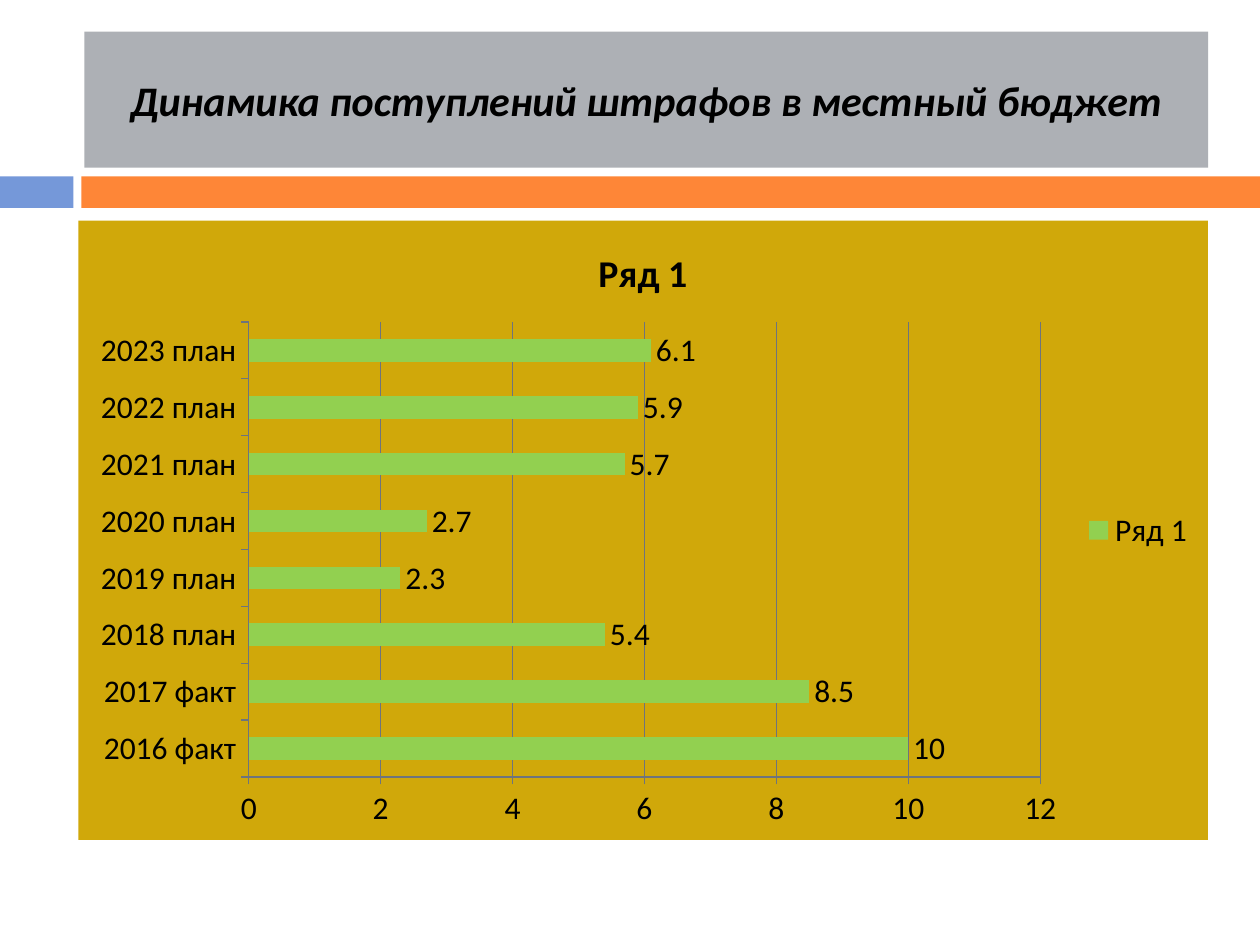
from lxml.etree import fromstring
from pptx import Presentation
from pptx.chart.data import CategoryChartData
from pptx.dml.color import RGBColor
from pptx.enum.chart import XL_CHART_TYPE, XL_LABEL_POSITION, XL_LEGEND_POSITION, XL_TICK_MARK
from pptx.enum.shapes import MSO_SHAPE
from pptx.enum.text import MSO_ANCHOR, PP_ALIGN
from pptx.util import Pt

TITLE = "Динамика поступлений штрафов в местный бюджет"
SERIES_NAME = "Ряд 1"
FINES = [
    ("2016 факт", 10),
    ("2017 факт", 8.5),
    ("2018 план", 5.4),
    ("2019 план", 2.3),
    ("2020 план", 2.7),
    ("2021 план", 5.7),
    ("2022 план", 5.9),
    ("2023 план", 6.1),
]

FONT = "Calibri"
BLACK = RGBColor(0x00, 0x00, 0x00)
GRAY = RGBColor(0xAD, 0xB0, 0xB5)
LINE_GRAY = RGBColor(0x6E, 0x74, 0x7C)
BLUE = RGBColor(0x75, 0x98, 0xD9)
ORANGE = RGBColor(0xFE, 0x86, 0x37)
GOLD = RGBColor(0xD0, 0xA8, 0x0A)
GREEN = RGBColor(0x92, 0xD0, 0x50)

SLIDE_WIDTH, SLIDE_HEIGHT = 720, 540
BAND_TOP, BAND_HEIGHT = 100.8, 18
BANDS = [(0, 42, BLUE), (46.5, SLIDE_WIDTH - 46.5, ORANGE)]
TITLE_BOX = (48.2, 18, 642.2, 77.8)
CHART_BOX = (44.8, 126, 645.4, 354)


def set_font(font, size, bold=False, italic=False):
    font.name = FONT
    font.size = Pt(size)
    font.bold = bold
    font.italic = italic
    font.color.rgb = BLACK


def add_band(slide, left, width, color):
    band = slide.shapes.add_shape(
        MSO_SHAPE.RECTANGLE, Pt(left), Pt(BAND_TOP), Pt(width), Pt(BAND_HEIGHT))
    band.shadow.inherit = False
    band.fill.solid()
    band.fill.fore_color.rgb = color
    band.line.fill.background()


def format_title(title):
    title.left, title.top, title.width, title.height = map(Pt, TITLE_BOX)
    title.fill.solid()
    title.fill.fore_color.rgb = GRAY
    title.text_frame.text = TITLE
    title.text_frame.vertical_anchor = MSO_ANCHOR.MIDDLE
    paragraph = title.text_frame.paragraphs[0]
    paragraph.alignment = PP_ALIGN.CENTER
    set_font(paragraph.font, 24, bold=True, italic=True)


def fill_chart(chart, color):
    properties = fromstring(
        '<c:spPr xmlns:c="http://schemas.openxmlformats.org/drawingml/2006/chart" '
        'xmlns:a="http://schemas.openxmlformats.org/drawingml/2006/main">'
        f'<a:solidFill><a:srgbClr val="{color}"/></a:solidFill>'
        '<a:ln><a:noFill/></a:ln></c:spPr>')
    chart.font.size = Pt(18)
    text_properties = chart.element.find("{*}txPr")
    text_properties.addprevious(properties)


def add_fines_chart(slide):
    data = CategoryChartData()
    data.categories = [year for year, _ in FINES]
    data.add_series(SERIES_NAME, [value for _, value in FINES])
    chart = slide.shapes.add_chart(
        XL_CHART_TYPE.BAR_CLUSTERED, *map(Pt, CHART_BOX), data).chart
    set_font(chart.font, 18)
    fill_chart(chart, GOLD)

    chart.has_title = True
    chart.chart_title.include_in_layout = False
    chart.chart_title.text_frame.text = SERIES_NAME
    set_font(chart.chart_title.text_frame.paragraphs[0].font, 21.6, bold=True)

    chart.has_legend = True
    chart.legend.position = XL_LEGEND_POSITION.RIGHT
    chart.legend.include_in_layout = False

    for axis in (chart.category_axis, chart.value_axis):
        axis.major_tick_mark = XL_TICK_MARK.CROSS if axis is chart.value_axis else XL_TICK_MARK.OUTSIDE
        axis.major_tick_mark = XL_TICK_MARK.OUTSIDE
        axis.format.line.color.rgb = LINE_GRAY
    chart.value_axis.minimum_scale = 0
    chart.value_axis.maximum_scale = 12
    chart.value_axis.major_unit = 2
    chart.value_axis.has_major_gridlines = True
    chart.value_axis.major_gridlines.format.line.color.rgb = LINE_GRAY

    plot = chart.plots[0]
    plot.vary_by_categories = False
    plot.gap_width = 150
    plot.has_data_labels = True
    plot.data_labels.show_value = True
    plot.data_labels.position = XL_LABEL_POSITION.OUTSIDE_END
    bars = plot.series[0].format
    bars.fill.solid()
    bars.fill.fore_color.rgb = GREEN


def main():
    presentation = Presentation()
    presentation.slide_width = Pt(SLIDE_WIDTH)
    presentation.slide_height = Pt(SLIDE_HEIGHT)
    slide = presentation.slides.add_slide(presentation.slide_layouts[5])
    for band in BANDS:
        add_band(slide, *band)
    format_title(slide.shapes.title)
    add_fines_chart(slide)
    presentation.save("out.pptx")


if __name__ == "__main__":
    main()
